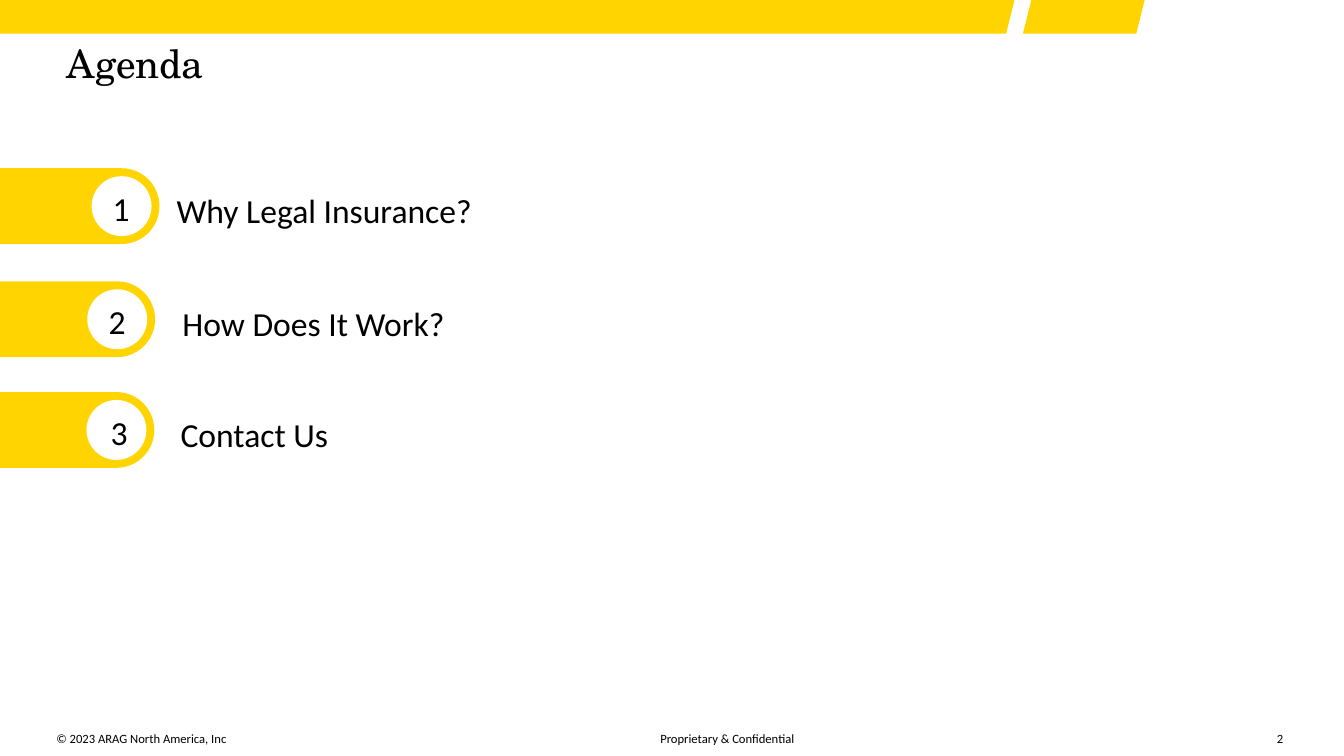
from dataclasses import dataclass

from pptx import Presentation
from pptx.dml.color import RGBColor
from pptx.enum.shapes import MSO_SHAPE
from pptx.enum.text import MSO_ANCHOR
from pptx.oxml import parse_xml
from pptx.oxml.ns import nsdecls
from pptx.util import Cm, Pt


@dataclass(frozen=True)
class Theme:
    yellow: RGBColor = RGBColor(0xFF, 0xD4, 0x00)
    white: RGBColor = RGBColor(0xFF, 0xFF, 0xFF)
    black: RGBColor = RGBColor(0, 0, 0)
    heading_font: str = "TeX Gyre Schola"
    body_font: str = "Calibri"
    title_size: int = 28
    body_size: int = 24
    footer_size: int = 9


THEME = Theme()
SLIDE_WIDTH, SLIDE_HEIGHT = 33.87, 19.05

# topic, tab right edge, tab top, number left, topic left (cm)
AGENDA = [
    ("Why Legal Insurance?", 4.02, 4.24, 2.84, 4.45),
    ("How Does It Work?", 3.91, 7.09, 2.74, 4.6),
    ("Contact Us", 3.89, 9.88, 2.79, 4.55),
]


def add_text(slide, text, left, top, width, height, *, size,
             font=THEME.body_font, inset=(0, 0), anchor=MSO_ANCHOR.TOP,
             tab_stop=None):
    """Add a one-paragraph text box; lengths in cm, inset is (side, top)."""
    frame = slide.shapes.add_textbox(
        Cm(left), Cm(top), Cm(width), Cm(height)).text_frame
    frame.word_wrap = True
    frame.vertical_anchor = anchor
    frame.margin_left = frame.margin_right = Cm(inset[0])
    frame.margin_top = frame.margin_bottom = Cm(inset[1])
    paragraph = frame.paragraphs[0]
    if tab_stop is not None:
        paragraph._p.get_or_add_pPr().append(parse_xml(
            f'<a:tabLst {nsdecls("a")}>'
            f'<a:tab pos="{Cm(tab_stop)}" algn="l"/></a:tabLst>'))
    run = paragraph.add_run()
    run.text = text
    run.font.name = font
    run.font.size = Pt(size)
    run.font.color.rgb = THEME.black


def add_filled(slide, preset, left, top, width, height, color):
    shape = slide.shapes.add_shape(
        preset, Cm(left), Cm(top), Cm(width), Cm(height))
    shape.shadow.inherit = False
    shape.fill.solid()
    shape.fill.fore_color.rgb = color
    shape.line.fill.background()
    return shape


def add_header(slide, left, top):
    """Draw the two slanted bars, which bleed off the top edge, and the title."""
    long_width, short_width, bar_height = 27.4, 3.28, 1.7
    bar_left = left - 1.62
    for width in (long_width, short_width):
        add_filled(slide, MSO_SHAPE.PARALLELOGRAM, bar_left,
                   top - bar_height / 2, width, bar_height, THEME.yellow)
        bar_left += width
    add_text(slide, "Agenda", left + 1.42, top + 0.85, 25.32, 3,
             size=THEME.title_size, font=THEME.heading_font,
             inset=(0.25, 0.13))


def add_agenda_item(slide, number, topic, right, top, number_left, topic_left):
    """Draw a tab that enters from the left edge, its number and its topic."""
    tab_width, tab_height, rim = 6.93, 1.91, 0.2
    diameter = tab_height - 2 * rim
    tab = add_filled(slide, MSO_SHAPE.ROUNDED_RECTANGLE, right - tab_width,
                     top, tab_width, tab_height, THEME.yellow)
    tab.adjustments[0] = 0.5
    add_filled(slide, MSO_SHAPE.OVAL, right - rim - diameter, top + rim,
               diameter, diameter, THEME.white)
    add_text(slide, str(number), number_left, top + 0.49, 1.73, 1.7,
             size=THEME.body_size)
    add_text(slide, topic, topic_left, top - 0.11, 25.32, 2.34,
             size=THEME.body_size, anchor=MSO_ANCHOR.MIDDLE)


def add_footer(slide, left, top, width):
    add_text(slide,
             "© 2023 ARAG North America, Inc\tProprietary & Confidential",
             left, top, width, 0.84, size=THEME.footer_size, tab_stop=15.22)
    add_text(slide, "2", left + 30.76, top, 0.84, 0.43,
             size=THEME.footer_size)


def main():
    presentation = Presentation()
    presentation.slide_width = Cm(SLIDE_WIDTH)
    presentation.slide_height = Cm(SLIDE_HEIGHT)
    slide = presentation.slides.add_slide(presentation.slide_layouts[6])
    add_header(slide, 0, 0)
    for number, item in enumerate(AGENDA, start=1):
        add_agenda_item(slide, number, *item)
    add_footer(slide, 1.42, SLIDE_HEIGHT - 0.63, SLIDE_WIDTH - 1.42)
    presentation.save("out.pptx")


if __name__ == "__main__":
    main()
